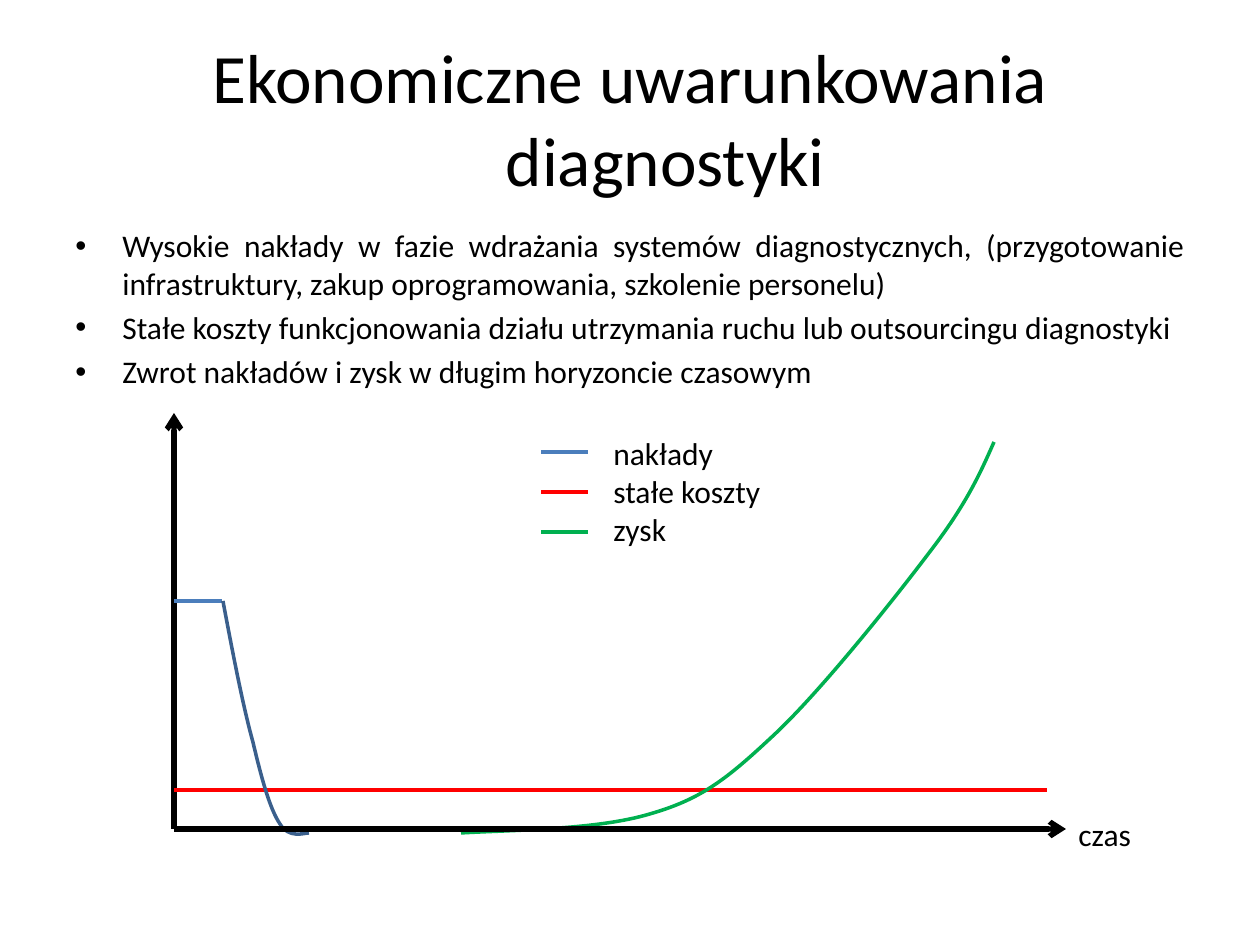
from dataclasses import dataclass

from lxml.etree import SubElement
from pptx import Presentation
from pptx.dml.color import RGBColor
from pptx.enum.shapes import MSO_CONNECTOR, MSO_SHAPE
from pptx.enum.text import MSO_ANCHOR, PP_ALIGN
from pptx.oxml.ns import qn
from pptx.util import Pt

EMU_PER_PX = 914400 / 126


def emu(px):
    return round(px * EMU_PER_PX)


@dataclass(frozen=True)
class Theme:
    font: str = "Calibri"
    ink: str = "000000"
    paper: str = "FFFFFF"
    outlay: str = "4B7EBC"
    outlay_curve: str = "3A5F8C"
    fixed: str = "FF0000"
    profit: str = "00B050"
    title_size: float = 39.6
    text_size: float = 18
    axis_width: float = 3
    line_width: float = 2.25
    curve_width: float = 2
    frame_width: float = 0.75


class SlideBuilder:
    def __init__(self, page, theme):
        self.page = page
        self.theme = theme

    def fill_text(self, frame, lines, *, size, align=PP_ALIGN.LEFT,
                  anchor=MSO_ANCHOR.TOP, hanging=0, space_before=0, bullet=None):
        """Fill a text frame with one paragraph per line."""
        frame.word_wrap = True
        frame.vertical_anchor = anchor
        for index, line in enumerate(lines):
            para = frame.add_paragraph() if index else frame.paragraphs[0]
            para.alignment = align
            para.space_before = Pt(space_before)
            span = para.add_run()
            span.text = line
            span.font.name = self.theme.font
            span.font.size = Pt(size)
            span.font.color.rgb = RGBColor.from_string(self.theme.ink)
            properties = para._p.get_or_add_pPr()
            if hanging:
                properties.set("marL", str(emu(hanging)))
                properties.set("indent", str(-emu(hanging)))
            if bullet:
                SubElement(properties, qn("a:buFont"), typeface="Arial")
                SubElement(properties, qn("a:buChar"), char=bullet)

    def text(self, left, top, width, height, lines, **style):
        box = self.page.shapes.add_textbox(*map(emu, (left, top, width, height)))
        self.fill_text(box.text_frame, lines, **style)

    def label(self, left, top, width, height, lines):
        box = self.page.shapes.add_shape(
            MSO_SHAPE.RECTANGLE, *map(emu, (left, top, width, height)))
        box.shadow.inherit = False
        box.fill.solid()
        box.fill.fore_color.rgb = RGBColor.from_string(self.theme.paper)
        self.stroke(box, self.theme.paper, self.theme.frame_width)
        self.fill_text(box.text_frame, lines, size=self.theme.text_size)

    def stroke(self, shape, color, width):
        shape.line.color.rgb = RGBColor.from_string(color)
        shape.line.width = Pt(width)

    def line(self, start, end, color, width, arrow=False):
        connector = self.page.shapes.add_connector(
            MSO_CONNECTOR.STRAIGHT, *map(emu, (*start, *end)))
        self.stroke(connector, color, width)
        if arrow:
            SubElement(connector.line._get_or_add_ln(), qn("a:tailEnd"), type="arrow")
        SubElement(connector._element.spPr, qn("a:effectLst"))

    def curve(self, points, color):
        """Draw cubic Bézier segments: a start, then two handles and an end each."""
        start, *rest = [(emu(x), emu(y)) for x, y in points]
        builder = self.page.shapes.build_freeform(*start)
        builder.add_line_segments(rest, close=False)
        shape = builder.convert_to_shape()
        shape.shadow.inherit = False
        shape.fill.background()
        self.stroke(shape, color, self.theme.curve_width)
        outline = next(shape._element.iter(qn("a:path")))
        steps = outline.findall(qn("a:lnTo"))
        for first in range(0, len(steps), 3):
            segment = SubElement(outline, qn("a:cubicBezTo"))
            for step in steps[first:first + 3]:
                segment.append(step[0])
                outline.remove(step)


def main():
    theme = Theme()
    deck = Presentation()
    deck.slide_width, deck.slide_height = emu(1260), emu(945)
    slide = SlideBuilder(deck.slides.add_slide(deck.slide_layouts[6]), theme)

    slide.text(63, 38, 1134, 158, ["Ekonomiczne uwarunkowania diagnostyki"],
               size=theme.title_size, align=PP_ALIGN.CENTER,
               anchor=MSO_ANCHOR.MIDDLE, hanging=71)
    slide.text(63, 220, 1134, 624, [
        "Wysokie nakłady w fazie wdrażania systemów diagnostycznych, "
        "(przygotowanie infrastruktury, zakup oprogramowania, szkolenie personelu)",
        "Stałe koszty funkcjonowania działu utrzymania ruchu lub outsourcingu diagnostyki",
        "Zwrot nakładów i zysk w długim horyzoncie czasowym",
    ], size=theme.text_size, align=PP_ALIGN.JUSTIFY, hanging=47,
        space_before=3.6, bullet="•")

    origin = (174, 829)
    slide.line(origin, (174, 413), theme.ink, theme.axis_width, arrow=True)
    slide.line((222, 601), (174, 601), theme.outlay, theme.line_width)
    slide.line((174, 790), (1047, 790), theme.fixed, theme.line_width)
    slide.curve([(223, 601), (233, 654), (243, 706), (253, 742),
                 (262, 780), (270, 809), (280, 824),
                 (289, 839), (304, 833), (309, 833)], theme.outlay_curve)
    slide.curve([(994, 442), (980, 474), (966, 505), (929, 553),
                 (892, 602), (820, 692), (774, 735),
                 (727, 779), (702, 799), (650, 814),
                 (597, 830), (513, 830), (461, 833)], theme.profit)

    legend = {"nakłady": theme.outlay, "stałe koszty": theme.fixed,
              "zysk": theme.profit}
    for row, color in enumerate(legend.values()):
        y = 452 + 40 * row
        slide.line((588, y), (541, y), color, theme.line_width)
    slide.label(601, 428, 277, 127, list(legend))
    slide.label(1066, 809, 110, 50, ["czas"])
    slide.line(origin, (1066, 829), theme.ink, theme.axis_width, arrow=True)

    deck.save("out.pptx")


if __name__ == "__main__":
    main()
